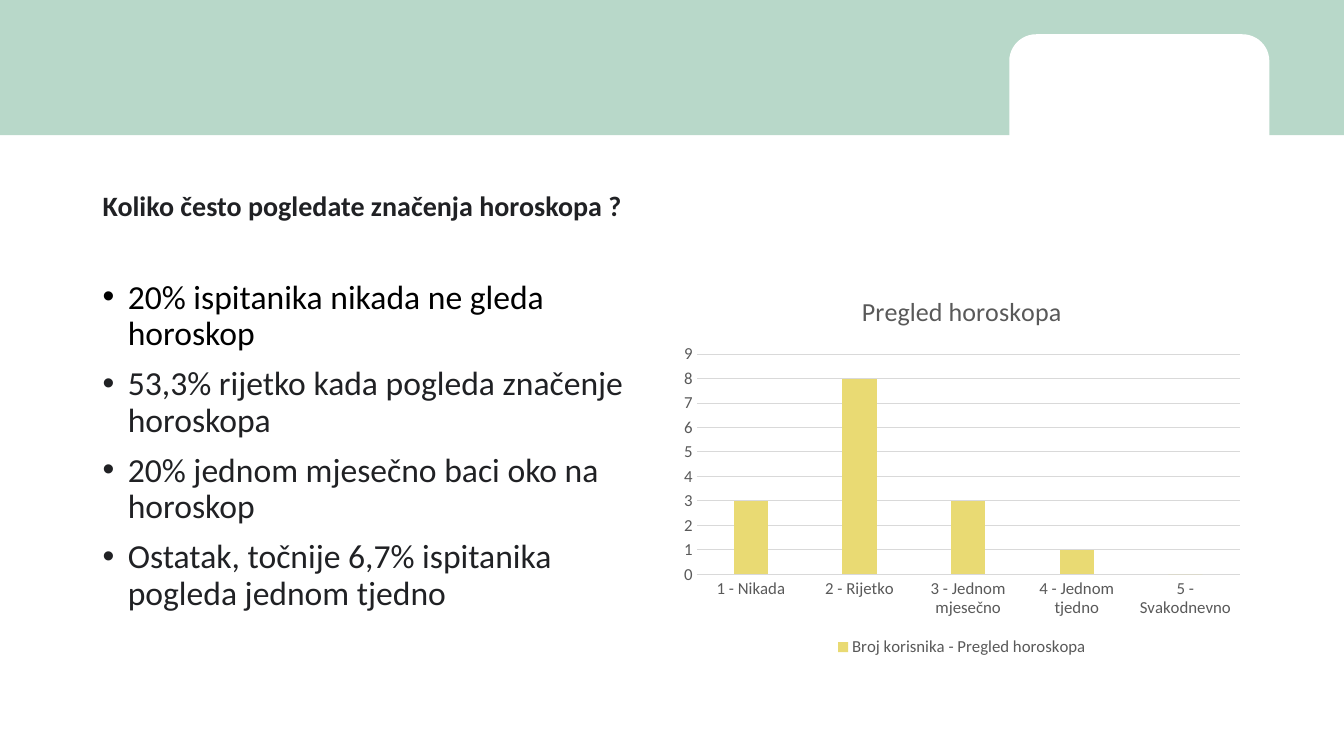
from lxml import etree
from pptx import Presentation
from pptx.chart.data import CategoryChartData
from pptx.dml.color import RGBColor
from pptx.enum.chart import XL_CHART_TYPE, XL_LEGEND_POSITION, XL_TICK_MARK
from pptx.enum.shapes import MSO_SHAPE
from pptx.oxml.ns import qn
from pptx.util import Inches, Pt

RECTANGLE = MSO_SHAPE.RECTANGLE
ROUNDED = MSO_SHAPE.ROUNDED_RECTANGLE
COLUMNS = XL_CHART_TYPE.COLUMN_CLUSTERED
BOTTOM = XL_LEGEND_POSITION.BOTTOM
NO_TICK = XL_TICK_MARK.NONE

QUESTION = "Koliko često pogledate značenja horoskopa ?"
FINDINGS = [
    ("20% ispitanika nikada ne gleda horoskop", "black"),
    ("53,3% rijetko kada pogleda značenje horoskopa", "ink"),
    ("20% jednom mjesečno baci oko na horoskop", "ink"),
    ("Ostatak, točnije 6,7% ispitanika pogleda jednom tjedno", "ink"),
]
CHART_TITLE = "Pregled horoskopa"
SERIES_NAME = "Broj korisnika - Pregled horoskopa"
ANSWERS = {
    "1 - Nikada": 3,
    "2 - Rijetko": 8,
    "3 - Jednom mjesečno": 3,
    "4 - Jednom tjedno": 1,
    "5 - Svakodnevno": 0,
}

THEME = {
    "font": "Calibri",
    "colors": {
        "band": "B8D8C9", "white": "FFFFFF", "black": "000000", "ink": "202124",
        "label": "595959", "grid": "D9D9D9", "bar": "E9DA73",
    },
    "sizes": {"question": 20, "finding": 24, "chart_title": 18.6, "label": 12},
}

SLIDE_WIDTH, SLIDE_HEIGHT = 13.33, 7.5
MARGIN = 0.92
BODY_TOP = 2.73
BULLET_INDENT = 0.25
BACKDROP = [
    (RECTANGLE, (0, 0, SLIDE_WIDTH, 1.34), "band"),
    (ROUNDED, (10.01, 0.34, 2.58, 1.6), "white"),
]
QUESTION_BOX = (MARGIN, 1.82, 11.5, 0.44)
FINDINGS_BOX = (MARGIN, BODY_TOP, 5.47, 4.02)
CHART_BOX = (6.67, BODY_TOP, 5.74, 3.83)


def color(name):
    return RGBColor.from_string(THEME["colors"][name])


def inches(box):
    return [Inches(length) for length in box]


def set_all(target, values):
    for attribute, value in values.items():
        setattr(target, attribute, value)


def style_font(font, size, tint, bold=False):
    set_all(font, {"name": THEME["font"], "size": Pt(THEME["sizes"][size]), "bold": bold})
    font.color.rgb = color(tint)


def add_backdrop(slide):
    for preset, box, tint in BACKDROP:
        panel = slide.shapes.add_shape(preset, *inches(box))
        panel.shadow.inherit = False
        panel.fill.solid()
        panel.fill.fore_color.rgb = color(tint)
        panel.line.fill.background()


def add_text_frame(slide, box):
    frame = slide.shapes.add_textbox(*inches(box)).text_frame
    frame.word_wrap = True
    return frame


def add_question(slide):
    run = add_text_frame(slide, QUESTION_BOX).paragraphs[0].add_run()
    run.text = QUESTION
    style_font(run.font, "question", "ink", bold=True)


def add_findings(slide):
    frame = add_text_frame(slide, FINDINGS_BOX)
    indent = Inches(BULLET_INDENT)
    for index, (finding, tint) in enumerate(FINDINGS):
        paragraph = frame.add_paragraph() if index else frame.paragraphs[0]
        set_all(paragraph, {"line_spacing": 0.9, "space_before": Pt(10)})
        run = paragraph.add_run()
        run.text = finding
        style_font(run.font, "finding", tint)
        properties = paragraph._p.get_or_add_pPr()
        properties.set("marL", str(indent))
        properties.set("indent", str(-indent))
        etree.SubElement(properties, qn("a:buFont")).set("typeface", "Arial")
        etree.SubElement(properties, qn("a:buChar")).set("char", "•")


def draw_line(line):
    line.color.rgb = color("grid")
    line.width = Pt(0.75)


def add_answers_chart(slide):
    data = CategoryChartData(number_format="General")
    data.categories = list(ANSWERS)
    data.add_series(SERIES_NAME, list(ANSWERS.values()))
    chart = slide.shapes.add_chart(COLUMNS, *inches(CHART_BOX), data).chart
    style_font(chart.font, "label", "label")

    chart.has_title = True
    title = chart.chart_title.text_frame.paragraphs[0].add_run()
    title.text = CHART_TITLE
    style_font(title.font, "chart_title", "label")

    chart.has_legend = True
    set_all(chart.legend, {"position": BOTTOM, "include_in_layout": False})
    style_font(chart.legend.font, "label", "label")

    categories, values = chart.category_axis, chart.value_axis
    for axis in (categories, values):
        set_all(axis, {"major_tick_mark": NO_TICK, "minor_tick_mark": NO_TICK})
        style_font(axis.tick_labels.font, "label", "label")
    draw_line(categories.format.line)
    values.format.line.fill.background()
    set_all(values, {"minimum_scale": 0, "maximum_scale": 9, "major_unit": 1})
    draw_line(values.major_gridlines.format.line)

    plot = chart.plots[0]
    set_all(plot, {"gap_width": 219, "overlap": -27, "vary_by_categories": False})
    bars = plot.series[0].format.fill
    bars.solid()
    bars.fore_color.rgb = color("bar")


def main():
    deck = Presentation()
    set_all(deck, {"slide_width": Inches(SLIDE_WIDTH), "slide_height": Inches(SLIDE_HEIGHT)})
    slide = deck.slides.add_slide(deck.slide_layouts[6])
    add_backdrop(slide)
    add_findings(slide)
    add_question(slide)
    add_answers_chart(slide)
    deck.save("out.pptx")


if __name__ == "__main__":
    main()
